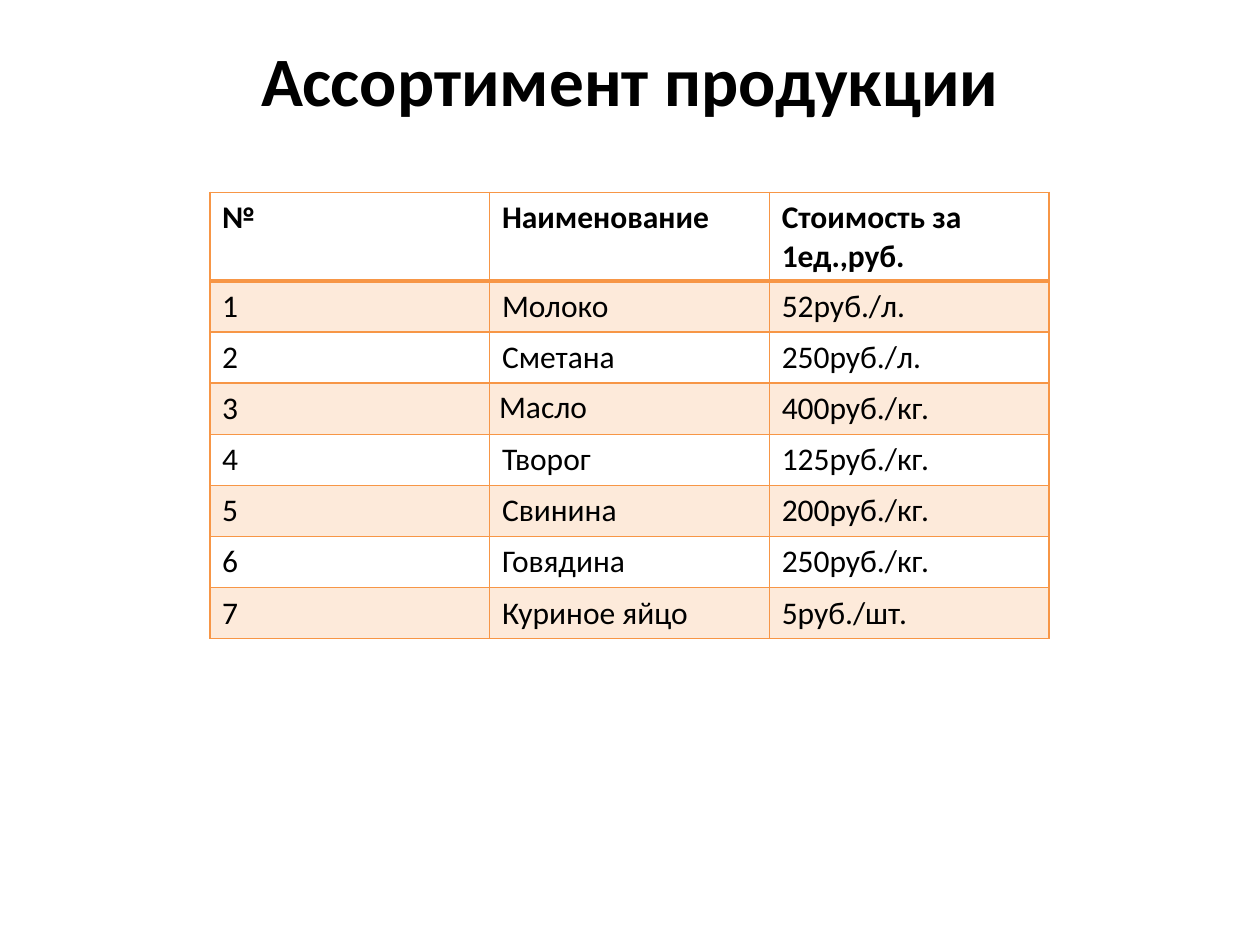
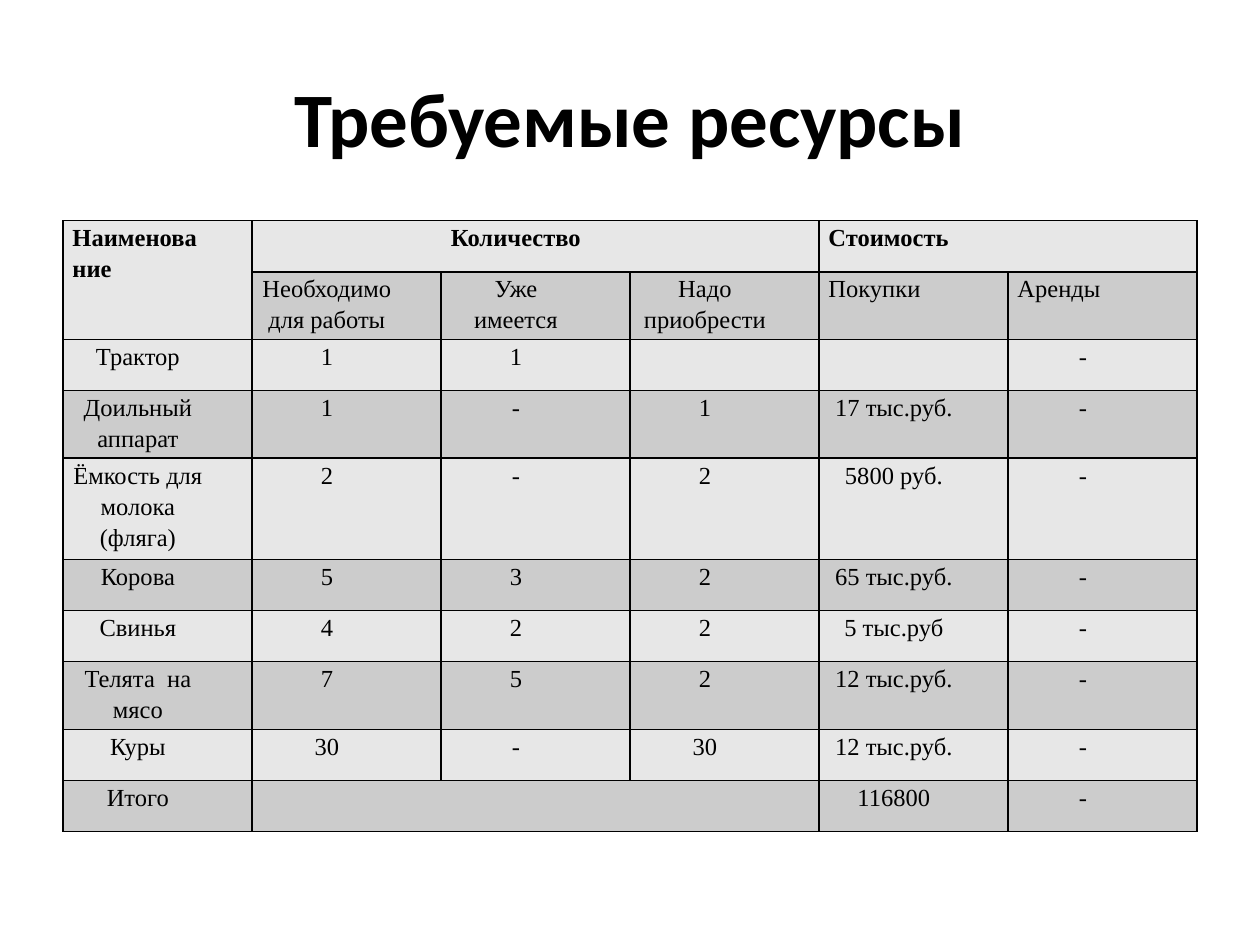
from dataclasses import dataclass, field

from lxml.etree import SubElement
from pptx import Presentation
from pptx.dml.color import RGBColor
from pptx.enum.text import MSO_ANCHOR as Anchor, PP_ALIGN as Align
from pptx.oxml.ns import qn
from pptx.util import Cm, Pt

COLORS = {
    "text": "000000",
    "white": "FFFFFF",
    "orange": "F79646",
    "peach": "FDEADA",
    "light_gray": "E7E7E7",
    "gray": "CCCCCC",
}
TITLE_BOX = (Cm(1.27), Cm(0.76), Cm(22.86), Cm(3.18))
ROW_HEIGHT = Cm(1.03)
TIGHT_LINES = 1.15

PRODUCTS = [
    ("№", "Наименование", "Стоимость за 1ед.,руб."),
    ("1", "Молоко", "52руб./л."),
    ("2", "Сметана", "250руб./л."),
    ("3", "Масло", "400руб./кг."),
    ("4", "Творог", "125руб./кг."),
    ("5", "Свинина", "200руб./кг."),
    ("6", "Говядина", "250руб./кг."),
    ("7", "Куриное яйцо", "5руб./шт."),
]
RESOURCES = [
    ("Наименование", "Количество", "", "", "Стоимость", ""),
    ("", "Необходимо для работы", "Уже имеется", "Надо приобрести", "Покупки", "Аренды"),
    ("Трактор", "1", "1", "", "", "-"),
    ("Доильный аппарат", "1", "-", "1", "17 тыс.руб.", "-"),
    ("Ёмкость для молока (фляга)", "2", "-", "2", "5800 руб.", "-"),
    ("Корова", "5", "3", "2", "65 тыс.руб.", "-"),
    ("Свинья", "4", "2", "2", "5 тыс.руб", "-"),
    ("Телята  на мясо", "7", "5", "2", "12 тыс.руб.", "-"),
    ("Куры", "30", "-", "30", "12 тыс.руб.", "-"),
    ("Итого", "", "", "", "116800", "-"),
]


@dataclass(frozen=True)
class Insets:
    left: float
    top: float
    right: float
    bottom: float


ROOMY = Insets(0.25, 0.13, 0.25, 0.13)
TIGHT = Insets(0.19, 0, 0.19, 0)
TIGHT_INDENTED = Insets(0.19, 0, 0.98, 0)


@dataclass(frozen=True)
class Grid:
    """A table: its place, its look and the cells that differ."""
    rows: list
    left: float
    top: float
    column_width: float
    bands: tuple
    border: str
    font: str
    size: float
    insets: Insets
    align: Align = Align.LEFT
    line_spacing: float | None = None
    header_rule: float = 1
    left_aligned: set = field(default_factory=set)
    tight_cells: set = field(default_factory=set)
    merges: tuple = ()


def rgb(name: str) -> RGBColor:
    return RGBColor.from_string(COLORS[name])


def write(frame, text: str, *, size: float, font: str = "Calibri", bold: bool = False,
          align: Align = Align.LEFT, line_spacing: float | None = None) -> None:
    paragraph = frame.paragraphs[0]
    paragraph.alignment = align
    if line_spacing:
        paragraph.line_spacing = line_spacing
    run = paragraph.add_run()
    run.text = text
    run.font.size, run.font.name, run.font.bold = Pt(size), font, bold
    run.font.color.rgb = rgb("text")


def set_insets(target, insets: Insets) -> None:
    target.margin_left, target.margin_right = Cm(insets.left), Cm(insets.right)
    target.margin_top, target.margin_bottom = Cm(insets.top), Cm(insets.bottom)


def add_title(slide, text: str, size: float, anchor: Anchor) -> None:
    frame = slide.shapes.add_textbox(*TITLE_BOX).text_frame
    frame.word_wrap = True
    frame.vertical_anchor = anchor
    set_insets(frame, Insets(0.25, 0, 0.25, 0))
    write(frame, text, size=size, bold=True, align=Align.CENTER)


def draw_borders(cell, color: str, widths: dict[str, float]) -> None:
    """Add cell borders; call it before the fill, as the schema orders them so."""
    properties = cell._tc.get_or_add_tcPr()
    for side, width in widths.items():
        line = SubElement(properties, qn(f"a:ln{side}"), w=str(Pt(width)))
        fill = SubElement(line, qn("a:solidFill"))
        SubElement(fill, qn("a:srgbClr"), val=COLORS[color])


def add_grid(slide, grid: Grid) -> None:
    row_count, column_count = len(grid.rows), len(grid.rows[0])
    table = slide.shapes.add_table(
        row_count, column_count, Cm(grid.left), Cm(grid.top),
        Cm(grid.column_width * column_count), ROW_HEIGHT * row_count).table
    table.first_row = table.horz_banding = False
    for column in table.columns:
        column.width = Cm(grid.column_width)
    for r, texts in enumerate(grid.rows):
        table.rows[r].height = ROW_HEIGHT
        for c, text in enumerate(texts):
            cell = table.cell(r, c)
            tight = text in grid.tight_cells
            set_insets(cell, TIGHT if tight else grid.insets)
            draw_borders(cell, grid.border, {
                "L": 1, "R": 1,
                "T": grid.header_rule if r == 1 else 1,
                "B": grid.header_rule if r == 0 else 1,
            })
            cell.fill.solid()
            cell.fill.fore_color.rgb = rgb(grid.bands[r % 2])
            if text:
                write(cell.text_frame, text, size=grid.size, font=grid.font, bold=r == 0,
                      align=Align.LEFT if text in grid.left_aligned else grid.align,
                      line_spacing=TIGHT_LINES if tight else grid.line_spacing)
    for first, last in grid.merges:
        table.cell(*first).merge(table.cell(*last))


PRODUCT_GRID = Grid(
    PRODUCTS, left=4.23, top=3.88, column_width=5.64, bands=("white", "peach"),
    border="orange", font="Calibri", size=18, insets=ROOMY, header_rule=2,
    tight_cells={"Масло"})
RESOURCE_GRID = Grid(
    RESOURCES, left=1.27, top=4.45, column_width=3.81, bands=("light_gray", "gray"),
    border="text", font="Times New Roman", size=14, insets=TIGHT_INDENTED,
    align=Align.CENTER, line_spacing=TIGHT_LINES,
    left_aligned={"Наименование", "Стоимость", "Покупки", "Аренды"},
    merges=(((0, 0), (1, 0)), ((0, 1), (0, 3)), ((0, 4), (0, 5)), ((9, 1), (9, 3))))


def main() -> None:
    deck = Presentation()
    deck.slide_width, deck.slide_height = Cm(25.4), Cm(19.05)
    for title, size, anchor, grid in (
        ("Ассортимент продукции", 39.6, Anchor.TOP, PRODUCT_GRID),
        ("Требуемые ресурсы", 44, Anchor.MIDDLE, RESOURCE_GRID),
    ):
        slide = deck.slides.add_slide(deck.slide_layouts[6])
        add_title(slide, title, size, anchor)
        add_grid(slide, grid)
    deck.save("out.pptx")


if __name__ == "__main__":
    main()
